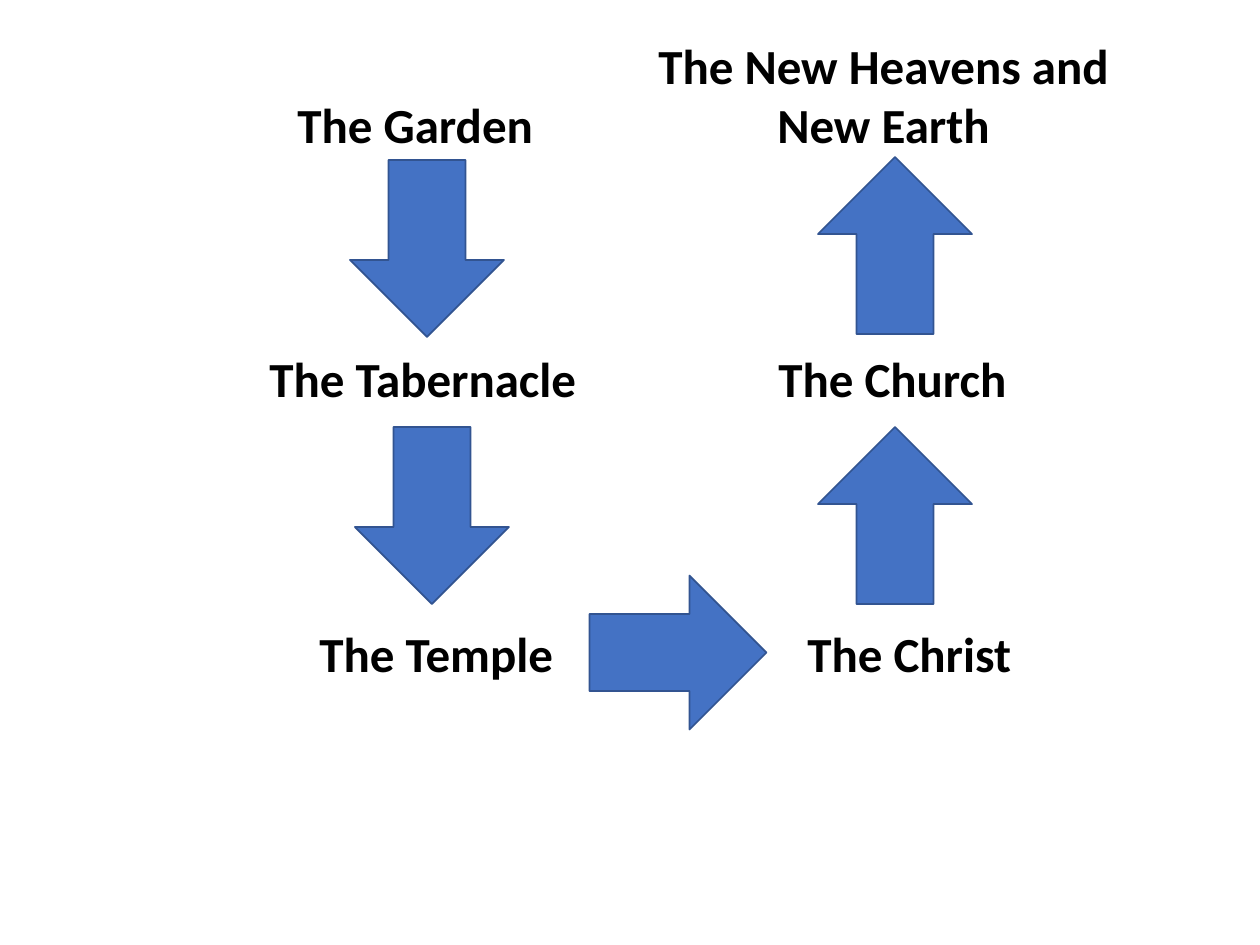
from pptx import Presentation
from pptx.dml.color import RGBColor
from pptx.enum.shapes import MSO_SHAPE
from pptx.enum.text import MSO_AUTO_SIZE, PP_ALIGN
from pptx.util import Emu, Pt

SCALE = 914400 / 126

LABELS = [
    ("The Garden", 285, 88, 284, 72, PP_ALIGN.LEFT),
    ("The Tabernacle", 257, 342, 349, 72, PP_ALIGN.LEFT),
    ("The Temple", 307, 617, 267, 72, PP_ALIGN.LEFT),
    ("The Christ", 795, 617, 267, 72, PP_ALIGN.LEFT),
    ("The Church", 766, 342, 267, 72, PP_ALIGN.LEFT),
    ("The New Heavens and New Earth", 632, 29, 503, 131, PP_ALIGN.CENTER),
]
ARROWS = [
    (350, 160, 0),
    (355, 427, 0),
    (601, 564, 270),
    (818, 427, 180),
    (818, 157, 180),
]


def px(count):
    return Emu(round(count * SCALE))


def paint(color, code):
    color.rgb = RGBColor.from_string(code)


def add_label(slide, text, left, top, width, height, align):
    box = slide.shapes.add_textbox(px(left), px(top), px(width), px(height))
    frame = box.text_frame
    frame.word_wrap = True
    frame.auto_size = MSO_AUTO_SIZE.SHAPE_TO_FIT_TEXT
    frame.text = text
    line = frame.paragraphs[0]
    line.alignment = align
    font = line.runs[0].font
    font.name = "Calibri"
    font.size = Pt(28)
    font.bold = True
    paint(font.color, "000000")


def add_arrow(slide, left, top, turn):
    arrow = slide.shapes.add_shape(
        MSO_SHAPE.DOWN_ARROW, px(left), px(top), px(154), px(177)
    )
    arrow.rotation = turn
    arrow.shadow.inherit = False
    arrow.fill.solid()
    paint(arrow.fill.fore_color, "4472C4")
    paint(arrow.line.color, "325491")
    arrow.line.width = Pt(1)


def main():
    deck = Presentation()
    deck.slide_width = px(1260)
    deck.slide_height = px(945)
    slide = deck.slides.add_slide(deck.slide_layouts[6])
    for label in LABELS:
        add_label(slide, *label)
    for arrow in ARROWS:
        add_arrow(slide, *arrow)
    deck.save("out.pptx")


if __name__ == "__main__":
    main()
